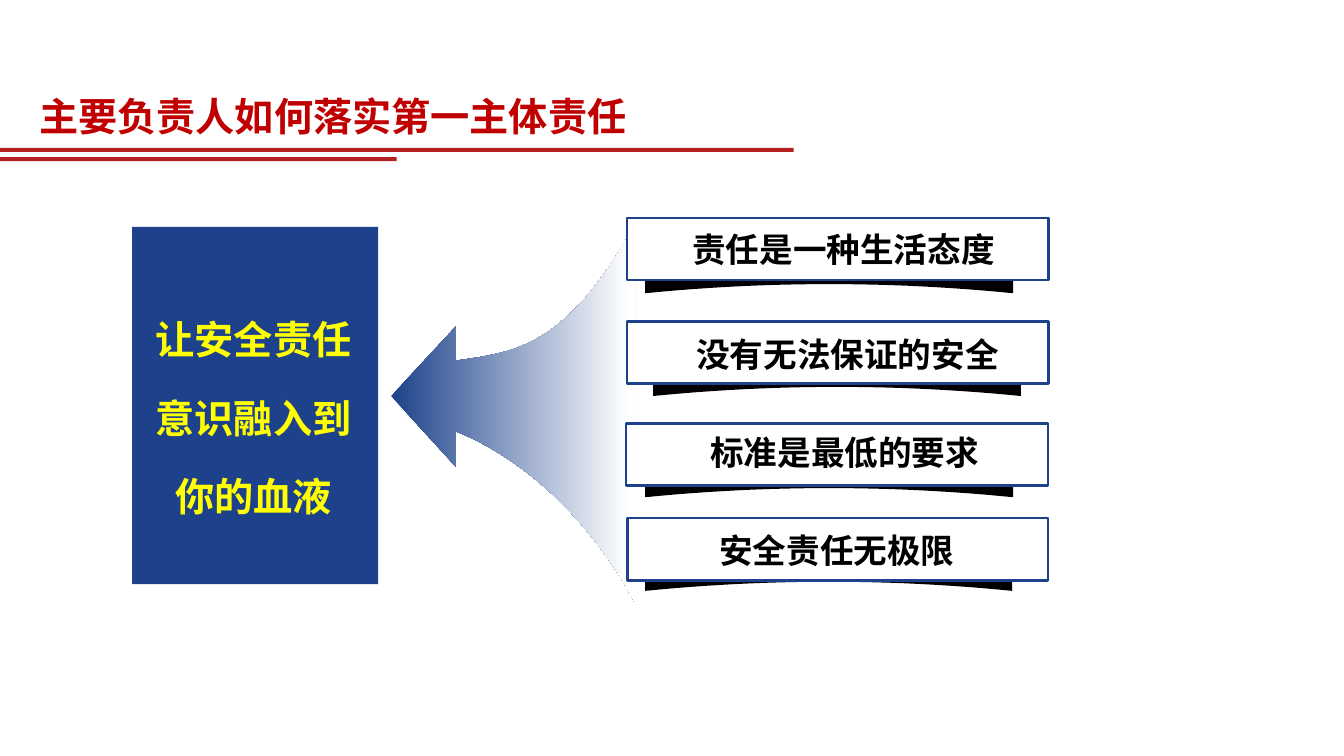
from lxml import etree
from pptx import Presentation
from pptx.dml.color import RGBColor
from pptx.enum.shapes import MSO_SHAPE
from pptx.enum.text import MSO_AUTO_SIZE, PP_ALIGN
from pptx.oxml.ns import qn
from pptx.util import Cm, Pt

RED, DARK_RED, BLUE = "C00000", "B61F22", "1D428B"
YELLOW, BLACK, WHITE = "FFFF00", "000000", "FFFFFF"
CJK_FONT = "Noto Sans CJK SC"

# Banner: left, top, width, height in cm; text and its left, top, width;
# left, top, width, height of the shadow
BANNERS = [
    ((15.8, 5.49, 10.62, 1.57), "责任是一种生活态度", (17.2, 5.64, 8.2), (16.26, 6.63, 9.27, 0.76)),
    ((15.8, 8.1, 10.62, 1.57), "没有无法保证的安全", (17.3, 8.28, 8.2), (16.46, 9.17, 9.27, 0.81)),
    ((15.77, 10.67, 10.64, 1.57), "标准是最低的要求", (17.65, 10.77, 7.34), (16.26, 11.84, 9.27, 0.69)),
    ((15.82, 13.06, 10.59, 1.57), "安全责任无极限", (17.88, 13.23, 6.5), (16.26, 14.2, 9.25, 0.69)),
]


def color(value):
    return RGBColor.from_string(value)


def paint(shape, fill, line=None):
    shape.shadow.inherit = False
    shape.fill.solid()
    shape.fill.fore_color.rgb = color(fill)
    if line:
        shape.line.color.rgb = color(line)
        shape.line.width = Pt(1.75)
    else:
        shape.line.fill.background()


def add_rectangle(page, box, fill, line=None):
    rectangle = page.shapes.add_shape(MSO_SHAPE.RECTANGLE, *map(Cm, box))
    paint(rectangle, fill, line)


def add_outline(page, points):
    start, *rest = [(Cm(x), Cm(y)) for x, y in points]
    builder = page.shapes.build_freeform(*start)
    builder.add_line_segments(rest, close=True)
    return builder.convert_to_shape()


def add_text(page, box, lines, size, ink, font=CJK_FONT, wrap=True, para_format=None):
    frame = page.shapes.add_textbox(*map(Cm, box)).text_frame
    frame.word_wrap = wrap
    frame.auto_size = MSO_AUTO_SIZE.SHAPE_TO_FIT_TEXT
    for number, line in enumerate(lines):
        para = frame.paragraphs[0] if number == 0 else frame.add_paragraph()
        for name, value in (para_format or {}).items():
            if number or name != "space_before":
                setattr(para, name, value)
        span = para.add_run()
        span.text = line
        for name, value in {"size": Pt(size), "bold": True, "name": font}.items():
            setattr(span.font, name, value)
        span.font.color.rgb = color(ink)
        latin = span.font._element.find(qn("a:latin"))
        east_asian = etree.Element(qn("a:ea"), typeface=font)
        latin.addnext(east_asian)


def bezier(start, first, second, end, steps=24):
    points = []
    for step in range(steps + 1):
        t = step / steps
        weights = ((1 - t) ** 3, 3 * t * (1 - t) ** 2, 3 * t * t * (1 - t), t ** 3)
        corners = (start, first, second, end)
        points.append(tuple(sum(w * p[axis] for w, p in zip(weights, corners))
                            for axis in (0, 1)))
    return points


def draw_header(page, left, top):
    add_text(page, (left + 0.74, top, 30.4, 1.45), ["主要负责人如何落实第一主体责任"],
             28, RED, font="Arial")
    # Double rule, the lower one half as long
    add_rectangle(page, (left, top + 1.52, 20, 0.1), DARK_RED)
    add_rectangle(page, (left, top + 1.75, 10, 0.1), DARK_RED)


def draw_arrow(page, left, top):
    upper = bezier((6.15, 0), (4.4, 3.15), (3.12, 3.23), (1.63, 3.45))
    head = [(1.63, 2.59), (0, 4.34), (1.63, 6.12)]
    lower = bezier((1.63, 5.23), (3.28, 5.89), (5, 7.39), (6.17, 9.6))
    arrow = add_outline(page, [(left + x, top + y) for x, y in upper + head + lower])
    paint(arrow, BLUE)
    # Blue at the tip, fading to white at the tail
    arrow.fill.gradient()
    arrow.fill.gradient_angle = 0
    stops = zip(arrow.fill.gradient_stops, (0, 0.97), (BLUE, WHITE))
    for stop, position, shade in stops:
        stop.position = position
        stop.color.rgb = color(shade)


def draw_shadow(page, left, top, width, height):
    steps, lift = 24, 0.23
    shoulder = top + height * 0.24
    arc = []
    for step in range(steps + 1):
        t = 1 - 2 * step / steps
        arc.append((left + width * (1 + t) / 2, top + height - lift * (1 - t * t)))
    roof = [(left, shoulder), (left + width / 2, top), (left + width, shoulder)]
    paint(add_outline(page, arc + roof), BLACK)


def draw_banner(page, box, text, text_box, shadow):
    draw_shadow(page, *shadow)
    add_rectangle(page, box, WHITE, BLUE)
    add_text(page, (*text_box, 1.27), [text], 24, BLACK, wrap=False)


def draw_goal(page, left, top, width, height):
    add_rectangle(page, (left, top, width, height), BLUE)
    spacing = {"alignment": PP_ALIGN.CENTER, "line_spacing": 1.5, "space_before": Pt(5.6)}
    add_text(page, (left - 0.1, top + 1.52, width + 0.12, 5.92),
             ["让安全责任", "意识融入到", "你的血液"], 28, YELLOW, para_format=spacing)


def main():
    deck = Presentation()
    deck.slide_width, deck.slide_height = Cm(33.87), Cm(19.05)
    page = deck.slides.add_slide(deck.slide_layouts[6])
    draw_header(page, 0, 2.21)
    draw_arrow(page, 9.86, 5.64)
    for banner in BANNERS:
        draw_banner(page, *banner)
    draw_goal(page, 3.33, 5.72, 6.2, 9)
    deck.save("out.pptx")


if __name__ == "__main__":
    main()
